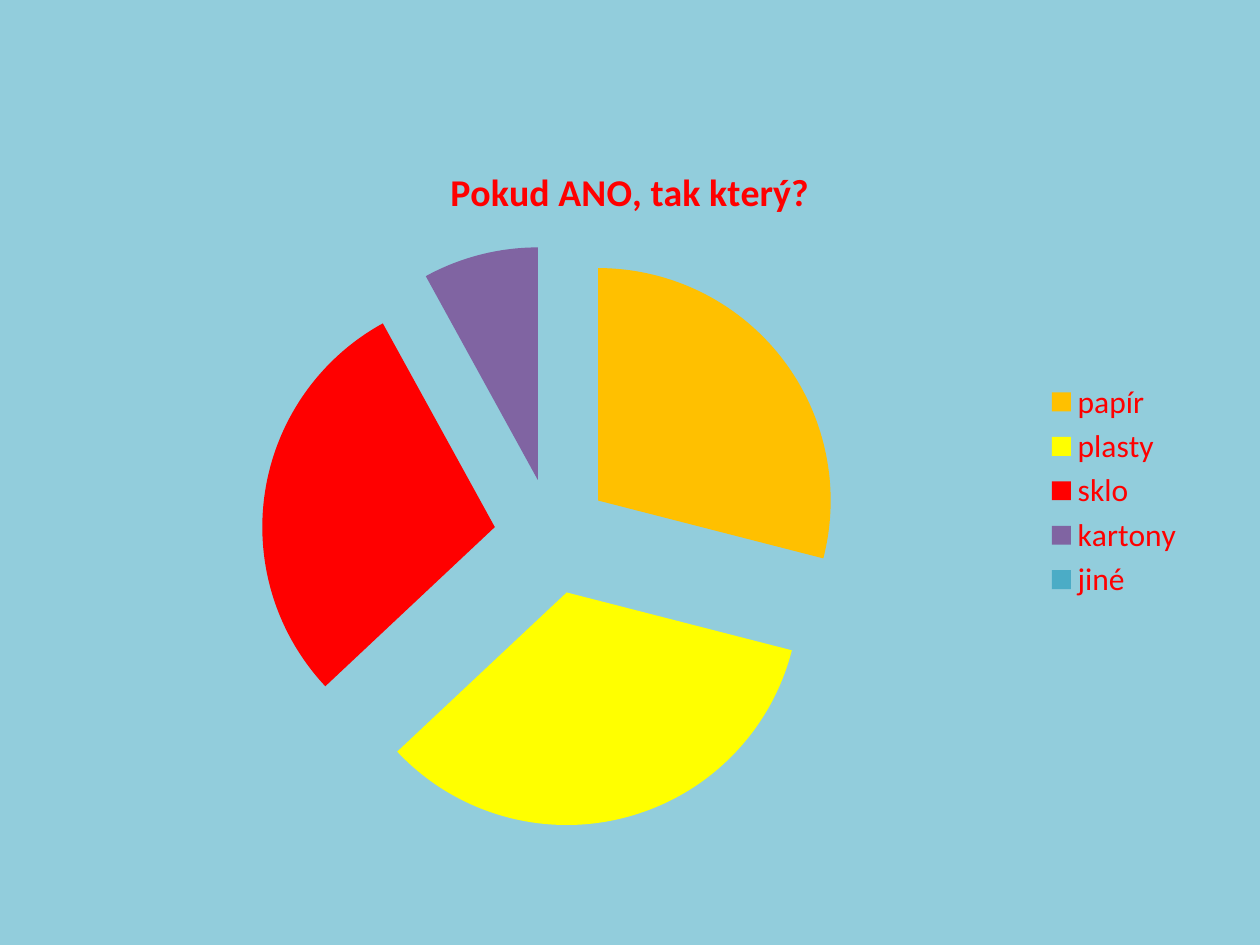
"""Build a slide with an exploded pie chart of sorted waste."""
from dataclasses import dataclass

from lxml import etree
from pptx import Presentation
from pptx import util as u
from pptx.chart import data as chart_data
from pptx.chart import series as chart_series
from pptx.dml import color
from pptx.enum import chart as kinds
from pptx.oxml import ns

TITLE = "Pokud ANO, tak který?"
FONT = "Calibri"
RED = "FF0000"


@dataclass(frozen=True)
class Slice:
    label: str
    value: int
    fill: str


SLICES = (
    Slice("papír", 29, "FFC000"),
    Slice("plasty", 34, "FFFF00"),
    Slice("sklo", 29, RED),
    Slice("kartony", 8, "8064A2"),
    Slice("jiné", 0, "4BACC6"),
)


def paint(target, hex_color: str) -> None:
    target.solid()
    target.fore_color.rgb = color.RGBColor.from_string(hex_color)


def style_font(font, size: float, hex_color: str, bold: bool = False) -> None:
    font.name = FONT
    font.size = u.Pt(size)
    font.bold = bold
    paint(font.fill, hex_color)


def explode(series: chart_series.PieSeries, percent: int) -> None:
    explosion = etree.Element(ns.qn("c:explosion"), val=str(percent))
    series._element.find(ns.qn("c:dPt")).addprevious(explosion)


def add_pie(page, slices: tuple[Slice, ...]) -> None:
    data = chart_data.CategoryChartData()
    data.categories = [item.label for item in slices]
    data.add_series(TITLE, [item.value for item in slices])
    chart = page.shapes.add_chart(
        kinds.XL_CHART_TYPE.PIE, u.Cm(1.27), u.Cm(2.77), u.Cm(22.86), u.Cm(14.25), data
    ).chart
    style_font(chart.font, 18, "92D050")

    chart.has_title = True
    title = chart.chart_title
    title.include_in_layout = False
    title.text_frame.text = TITLE
    style_font(title.text_frame.paragraphs[0].font, 21.6, RED, bold=True)

    chart.has_legend = True
    chart.legend.position = kinds.XL_LEGEND_POSITION.RIGHT
    chart.legend.include_in_layout = False
    style_font(chart.legend.font, 18, RED)

    plot = chart.plots[0]
    plot.vary_by_categories = True
    series = plot.series[0]
    for index, item in enumerate(slices):
        paint(series.points[index].format.fill, item.fill)
    explode(series, 25)


def main() -> None:
    deck = Presentation()
    deck.slide_width, deck.slide_height = u.Cm(25.4), u.Cm(19.05)
    page = deck.slides.add_slide(deck.slide_layouts[6])
    paint(page.background.fill, "92CDDC")
    add_pie(page, SLICES)
    deck.save("out.pptx")


if __name__ == "__main__":
    main()
